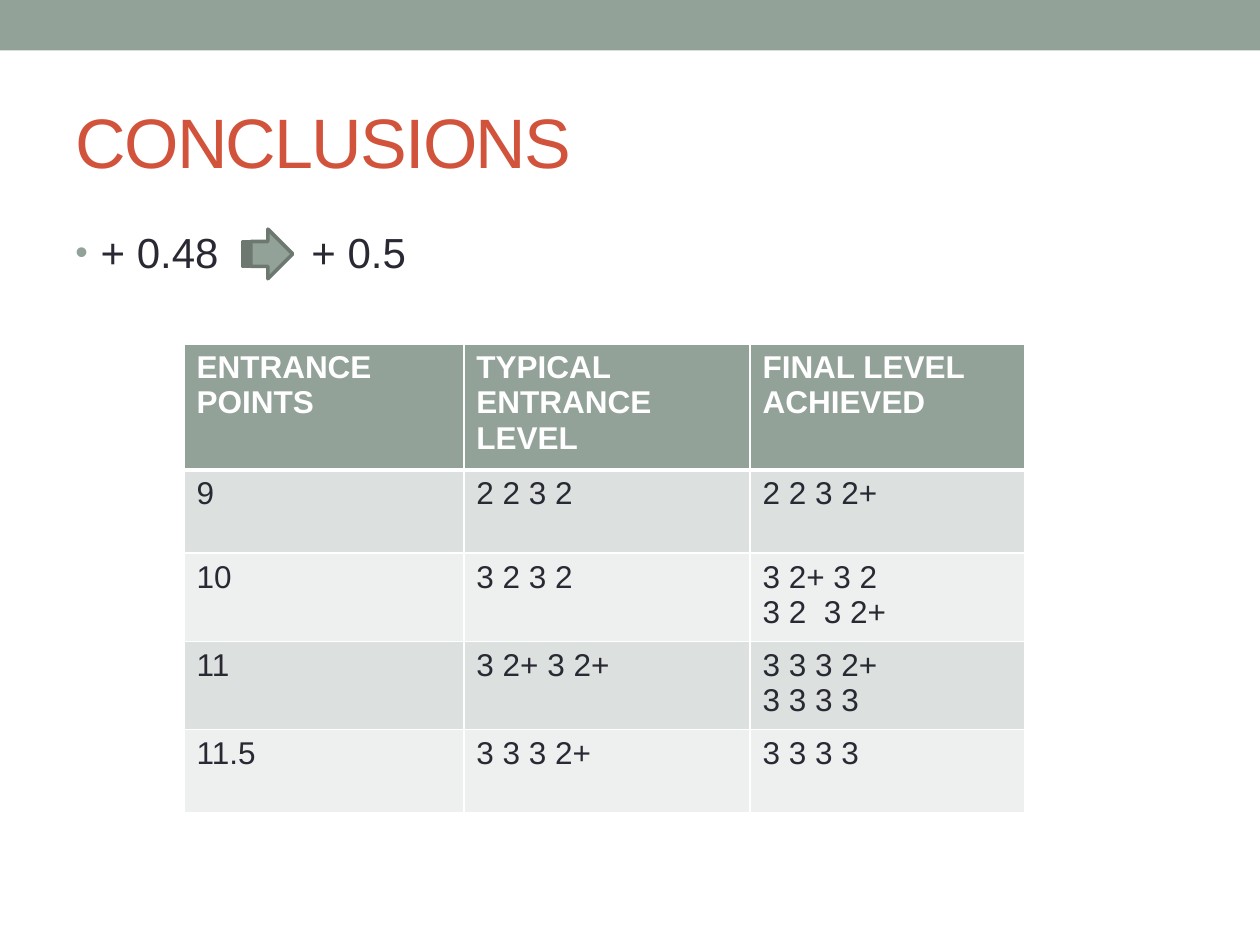
import pptx
import pptx.util
import pptx.dml.color
import pptx.enum.shapes
import pptx.enum.text
import pptx.oxml
import pptx.oxml.ns

Cm = pptx.util.Cm
Pt = pptx.util.Pt

COLORS = {
    "sage": "93A299", "outline": "6D7871", "accent": "D2533C", "ink": "292934",
    "white": "FFFFFF", "odd": "DCE0DE", "even": "EEF0EF",
}
HEADING = "CONCLUSIONS"
ROUNDING = "+ 0.48\t+ 0.5"
LEVELS = [
    ["ENTRANCE POINTS", "TYPICAL ENTRANCE LEVEL", "FINAL LEVEL ACHIEVED"],
    ["9", "2 2 3 2", "2 2 3 2+"],
    ["10", "3 2 3 2", "3 2+ 3 2\n3 2  3 2+"],
    ["11", "3 2+ 3 2+", "3 3 3 2+\n3 3 3 3"],
    ["11.5", "3 3 3 2+", "3 3 3 3"],
]
COLUMN_WIDTHS = [5.64, 5.77, 5.53]
ROW_HEIGHTS = [2.36] + [1.68] * 4
FORMATS = {
    "heading": {"name": "Arial", "size": Pt(40), "bold": False},
    "rounding": {"name": "Arial", "size": Pt(24)},
    "header": {"name": "Arial", "size": Pt(18), "bold": True},
    "level": {"name": "Arial", "size": Pt(18), "bold": False},
}


def rgb(color):
    return pptx.dml.color.RGBColor.from_string(COLORS[color])


def paint(part, color):
    part.fill.solid()
    part.fill.fore_color.rgb = rgb(color)


def style_text(frame, style, color):
    for paragraph in frame.paragraphs:
        for run in paragraph.runs:
            for attribute, value in FORMATS[style].items():
                setattr(run.font, attribute, value)
            run.font.color.rgb = rgb(color)


def xml(markup):
    head, tail = markup.split(">", 1)
    closing = "/" if head.endswith("/") else ""
    head = head.removesuffix("/")
    return pptx.oxml.parse_xml(f"{head} {pptx.oxml.ns.nsdecls('a')}{closing}>{tail}")


def add_preset(slide, kind, box, color):
    shape = slide.shapes.add_shape(kind, *map(Cm, box))
    shape.shadow.inherit = False
    paint(shape, color)
    return shape


def add_heading(slide):
    heading = slide.shapes.title
    place = {"left": 1.27, "top": 1.47, "width": 22.86, "height": 2.74}
    for attribute, value in place.items():
        setattr(heading, attribute, Cm(value))
    heading.text_frame.text = HEADING
    heading.text_frame.vertical_anchor = pptx.enum.text.MSO_ANCHOR.MIDDLE
    paragraph = heading.text_frame.paragraphs[0]
    paragraph.alignment = pptx.enum.text.PP_ALIGN.LEFT
    style_text(heading.text_frame, "heading", "accent")
    paragraph.runs[0].font._element.set("spc", "-100")


def add_rounding(slide):
    rounding = slide.shapes.add_textbox(Cm(1.27), Cm(4.45), Cm(22.86), Cm(13.54))
    frame = rounding.text_frame
    frame.word_wrap = True
    frame.text = ROUNDING
    style_text(frame, "rounding", "ink")
    paragraph = frame.paragraphs[0]
    paragraph.space_before = Pt(4.8)
    properties = paragraph._p.get_or_add_pPr()
    properties.set("marL", str(Cm(0.51)))
    properties.set("indent", str(-Cm(0.51)))
    for markup in (
        f'<a:buClr><a:srgbClr val="{COLORS["sage"]}"/></a:buClr>',
        '<a:buSzPct val="85000"/>',
        '<a:buFont typeface="Arial"/>',
        '<a:buChar char="•"/>',
        f'<a:tabLst><a:tab pos="{Cm(4.76)}" algn="l"/></a:tabLst>',
    ):
        properties.append(xml(markup))


def add_borders(cell, is_header):
    widths = {"lnL": 1, "lnR": 1, "lnT": 1, "lnB": 3 if is_header else 1}
    properties = cell._tc.get_or_add_tcPr()
    for position, (side, width) in enumerate(widths.items()):
        properties.insert(position, xml(
            f'<a:{side} w="{Pt(width)}"><a:solidFill>'
            f'<a:srgbClr val="{COLORS["white"]}"/></a:solidFill></a:{side}>'))


def add_levels(slide):
    levels = slide.shapes.add_table(
        len(LEVELS), len(LEVELS[0]), Cm(3.71), Cm(6.93),
        Cm(sum(COLUMN_WIDTHS)), Cm(sum(ROW_HEIGHTS))).table
    for column, width in zip(levels.columns, COLUMN_WIDTHS):
        column.width = Cm(width)
    for index, (row, height) in enumerate(zip(levels.rows, ROW_HEIGHTS)):
        row.height = Cm(height)
        is_header = index == 0
        for cell, text in zip(row.cells, LEVELS[index]):
            cell.text = text
            paint(cell, "sage" if is_header else "odd" if index % 2 else "even")
            style_text(cell.text_frame, "header" if is_header else "level",
                       "white" if is_header else "ink")
            add_borders(cell, is_header)


def main():
    deck = pptx.Presentation()
    deck.slide_width, deck.slide_height = Cm(25.4), Cm(19.05)
    slide = deck.slides.add_slide(deck.slide_layouts[5])
    presets = pptx.enum.shapes.MSO_SHAPE
    band = add_preset(slide, presets.RECTANGLE, (0, 0, 25.4, 1.02), "sage")
    band.line.fill.background()
    add_heading(slide)
    add_rounding(slide)
    arrow = add_preset(slide, presets.STRIPED_RIGHT_ARROW, (4.9, 4.62, 1, 1), "sage")
    arrow.line.color.rgb = rgb("outline")
    arrow.line.width = Pt(2.08)
    add_levels(slide)
    deck.save("out.pptx")


if __name__ == "__main__":
    main()
